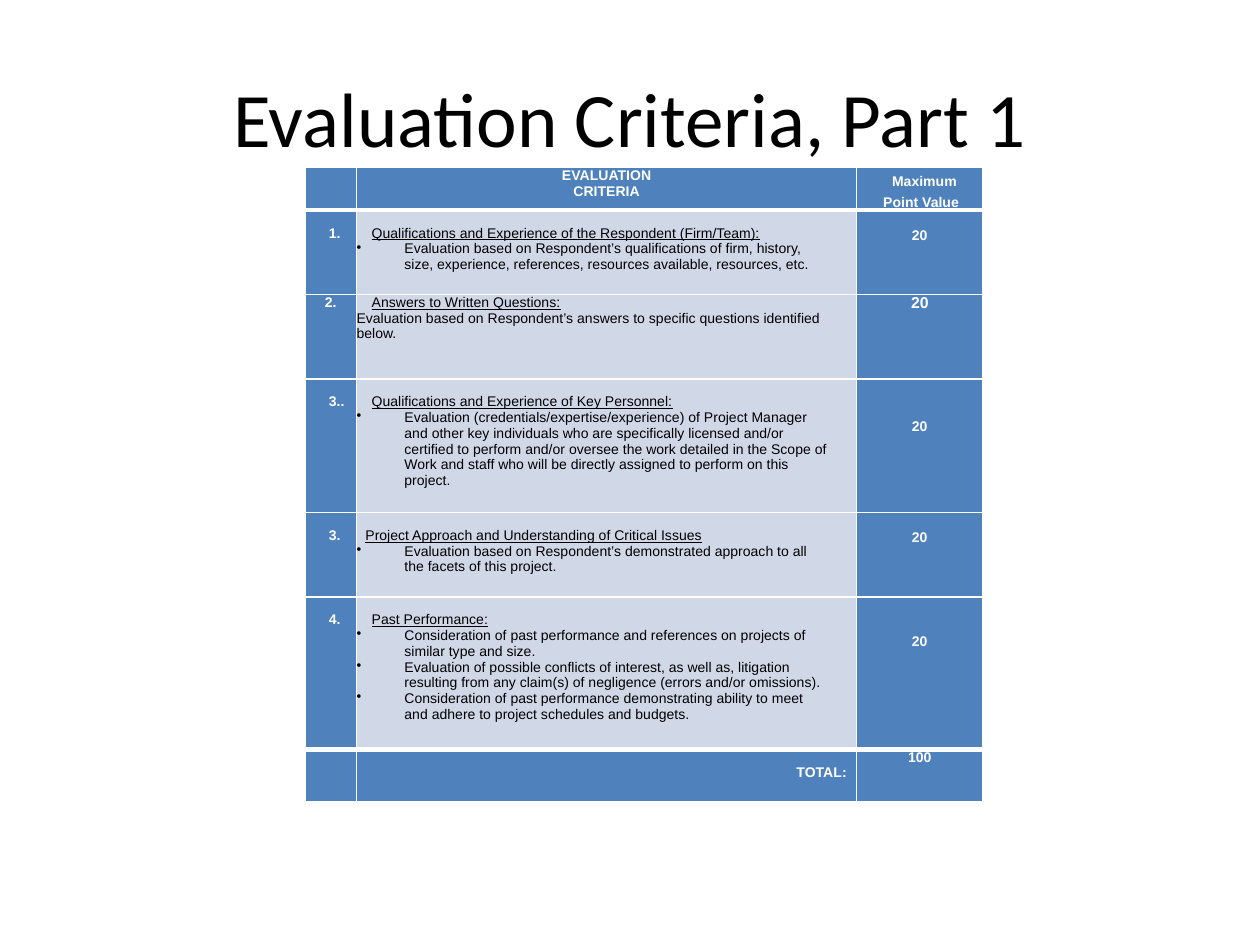
from pptx import Presentation
from pptx.dml.color import RGBColor
from pptx.enum.text import MSO_ANCHOR, PP_ALIGN as Align
from pptx.oxml.ns import qn
from pptx.util import Inches, Pt
from lxml.etree import SubElement

COLORS = {"blue": "4F81BD", "pale": "D0D8E8", "white": "FFFFFF", "black": "000000"}
TITLE = "Evaluation Criteria, Part 1"
HEADER = ("EVALUATION CRITERIA", (("Maximum", 0.28, 12.4), ("Point Value", 0.21, 11.9)))
TOTAL = ("TOTAL:", "100")
# top: gap above number and criteria; points_top: gap above the points
CRITERIA = [
    dict(number="1.", heading="Qualifications and Experience of the Respondent (Firm/Team):",
         details=["Evaluation based on Respondent’s qualifications of firm, history, size, "
                  "experience, references, resources available, resources, etc."],
         points="20", top=0.12, points_top=0.14),
    dict(number="2.", heading="Answers to Written Questions:",
         details=["Evaluation based on Respondent’s answers to specific questions "
                  "identified below."],
         points="20", top=0, points_top=0, points_size=9, bulleted=False,
         number_align=Align.CENTER),
    dict(number="3..", heading="Qualifications and Experience of Key Personnel:",
         details=["Evaluation (credentials/expertise/experience) of Project Manager and other "
                  "key individuals who are specifically licensed and/or certified to perform "
                  "and/or oversee the work detailed in the Scope of Work and staff who will be "
                  "directly assigned to perform on this project."],
         points="20", top=0.12, points_top=0.32, right=0.2),
    dict(number="3.", heading="Project Approach and Understanding of Critical Issues",
         details=["Evaluation based on Respondent’s demonstrated approach to all the facets "
                  "of this project."],
         points="20", top=0.12, points_top=0.14, heading_indent=0.07),
    dict(number="4.", heading="Past Performance:",
         details=["Consideration of past performance and references on projects of similar "
                  "type and size.",
                  "Evaluation of possible conflicts of interest, as well as, litigation "
                  "resulting from any claim(s) of negligence (errors and/or omissions).",
                  "Consideration of past performance demonstrating ability to meet and adhere "
                  "to project schedules and budgets."],
         points="20", top=0.12, points_top=0.29),
]
COLUMN_WIDTHS = (0.41, 3.97, 1)
ROW_HEIGHTS = (0.26, 0.67, 0.67, 1.06, 0.67, 1.21, 0.42)
TABLE_LEFT, TABLE_TOP = 2.42, 1.33


def color(name):
    return RGBColor.from_string(COLORS[name])


def style_cell(cell, fill, top_line=1, bottom_line=1):
    """Set white borders, fill and zero insets."""
    properties = cell._tc.get_or_add_tcPr()
    for side, width in zip("LRTB", (1, 1, top_line, bottom_line)):
        line = SubElement(properties, qn(f"a:ln{side}"), w=str(Pt(width)))
        solid = SubElement(line, qn("a:solidFill"))
        SubElement(solid, qn("a:srgbClr"), val=COLORS["white"])
    cell.fill.solid()
    cell.fill.fore_color.rgb = color(fill)
    cell.margin_left = cell.margin_right = cell.margin_top = cell.margin_bottom = 0


def write(frame, text, first=True, align=Align.LEFT, size=8, font="Arial", ink="white",
          bold=True, underline=False, indent=0, bulleted=False, spacing=None):
    """Write one paragraph, the first of the frame or a following one."""
    paragraph = frame.paragraphs[0] if first else frame.add_paragraph()
    paragraph.text = text
    paragraph.alignment = align
    if spacing:
        paragraph.line_spacing = Pt(spacing)
    properties = paragraph._p.get_or_add_pPr()
    properties.set("marL", str(Inches(indent)))
    properties.set("indent", str(-Inches(indent) if bulleted else 0))
    if bulleted:
        SubElement(properties, qn("a:buChar"), char="•")
    run = paragraph.runs[0]
    run.font.name, run.font.size = font, Pt(size)
    run.font.bold, run.font.underline = bold, underline
    run.font.color.rgb = color(ink)


def fill_criterion(row, item):
    number, criteria, points = row.cells
    number.margin_top = criteria.margin_top = Inches(item["top"])
    points.margin_top = Inches(item["points_top"])
    criteria.margin_right = Inches(item.get("right", 0.25))

    align = item.get("number_align", Align.LEFT)
    write(number.text_frame, item["number"], align=align,
          indent=0.19 if align == Align.LEFT else 0)
    write(criteria.text_frame, item["heading"], ink="black", bold=False, underline=True,
          indent=item.get("heading_indent", 0.12))
    bulleted = item.get("bulleted", True)
    for detail in item["details"]:
        write(criteria.text_frame, detail, first=False, ink="black", bold=False,
              indent=0.38 if bulleted else 0, bulleted=bulleted)
    write(points.text_frame, item["points"], align=Align.CENTER,
          size=item.get("points_size", 8))


def build_table(slide):
    table = slide.shapes.add_table(
        len(ROW_HEIGHTS), len(COLUMN_WIDTHS), Inches(TABLE_LEFT), Inches(TABLE_TOP),
        Inches(sum(COLUMN_WIDTHS)), Inches(sum(ROW_HEIGHTS))).table
    for column, width in zip(table.columns, COLUMN_WIDTHS):
        column.width = Inches(width)
    last = len(ROW_HEIGHTS) - 1
    for index, (row, height) in enumerate(zip(table.rows, ROW_HEIGHTS)):
        row.height = Inches(height)
        for position, cell in enumerate(row.cells):
            is_body = position == 1 and 0 < index < last
            style_cell(cell, "pale" if is_body else "blue",
                       top_line=3 if index in (1, last) else 1,
                       bottom_line=3 if index in (0, last - 1) else 1)

    heading, maximum = table.cell(0, 1), table.cell(0, 2)
    heading.margin_left = heading.margin_right = Inches(1.61)
    write(heading.text_frame, HEADER[0], align=Align.CENTER)
    for index, (text, indent, spacing) in enumerate(HEADER[1]):
        write(maximum.text_frame, text, first=index == 0, indent=indent, spacing=spacing)

    for index, item in enumerate(CRITERIA, start=1):
        fill_criterion(table.rows[index], item)

    label, total = table.cell(last, 1), table.cell(last, 2)
    label.margin_top, label.margin_right = Inches(0.12), Inches(0.08)
    write(label.text_frame, TOTAL[0], align=Align.RIGHT)
    write(total.text_frame, TOTAL[1], align=Align.CENTER)


def main():
    presentation = Presentation()
    presentation.slide_width, presentation.slide_height = Inches(10), Inches(7.5)
    slide = presentation.slides.add_slide(presentation.slide_layouts[6])
    title = slide.shapes.add_textbox(Inches(0.5), Inches(0.3), Inches(9), Inches(1.25))
    title.text_frame.word_wrap = True
    title.text_frame.vertical_anchor = MSO_ANCHOR.MIDDLE
    write(title.text_frame, TITLE, align=Align.CENTER, size=44, font="Calibri",
          ink="black", bold=False)
    build_table(slide)
    presentation.save("out.pptx")


if __name__ == "__main__":
    main()
